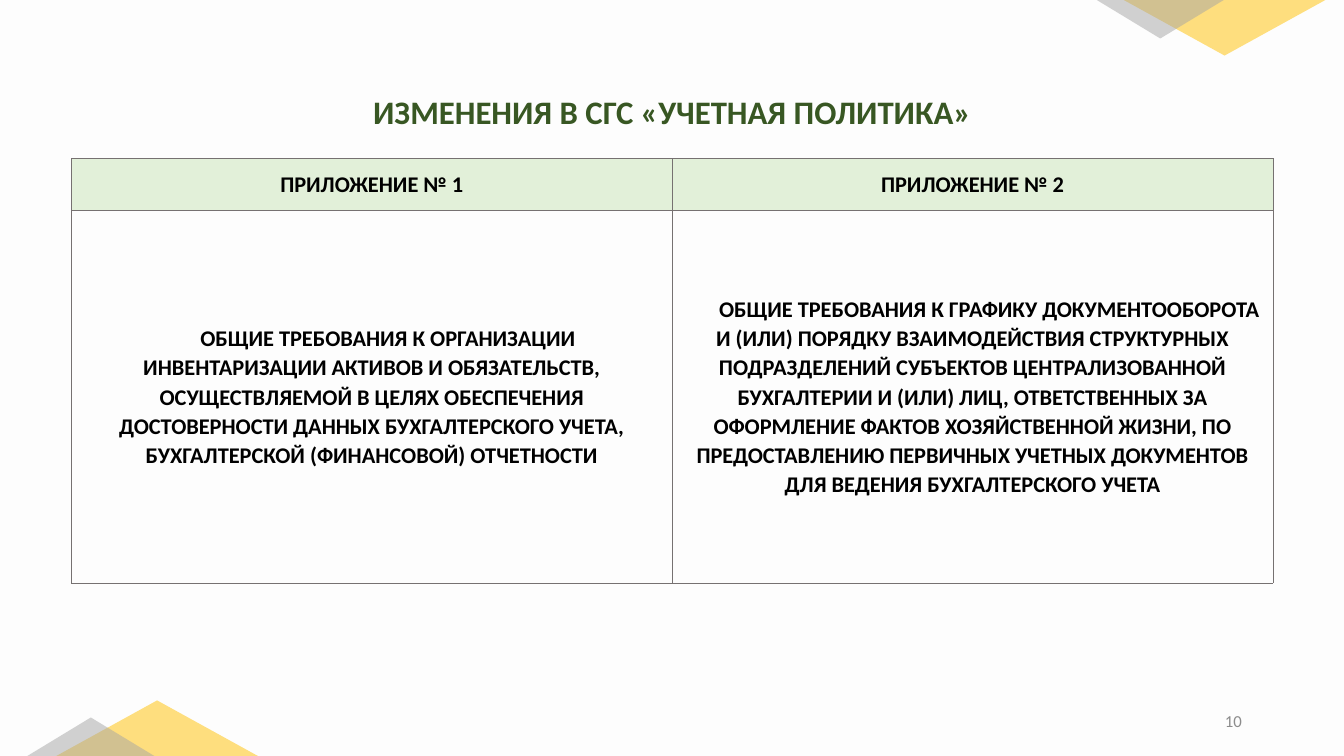
from dataclasses import dataclass

from lxml import etree
from pptx import Presentation
from pptx.dml.color import RGBColor
from pptx.enum.shapes import MSO_SHAPE
from pptx.enum.text import MSO_ANCHOR, MSO_AUTO_SIZE, PP_ALIGN
from pptx.oxml.ns import qn
from pptx.util import Cm, Pt

TRIANGLE = MSO_SHAPE.ISOSCELES_TRIANGLE
MIDDLE = MSO_ANCHOR.MIDDLE
NO_AUTOFIT = MSO_AUTO_SIZE.NONE
CENTER, RIGHT = PP_ALIGN.CENTER, PP_ALIGN.RIGHT

FONT = "Calibri"
SLIDE_W, SLIDE_H = 33.87, 19.05
LEFT, WIDTH = 1.8, 30.28
HEADER_H, BODY_H = 1.3, 9.4
YELLOW, GREY = "FFC000", "A5A5A5"


@dataclass
class Appendix:
    heading: str
    body: str
    indent: float


@dataclass
class Corner:
    left: float
    width: float
    height: float
    color: str
    at_top: bool


APPENDICES = [
    Appendix(
        "ПРИЛОЖЕНИЕ № 1",
        "ОБЩИЕ ТРЕБОВАНИЯ К ОРГАНИЗАЦИИ ИНВЕНТАРИЗАЦИИ АКТИВОВ И ОБЯЗАТЕЛЬСТВ, "
        "ОСУЩЕСТВЛЯЕМОЙ В ЦЕЛЯХ ОБЕСПЕЧЕНИЯ ДОСТОВЕРНОСТИ ДАННЫХ БУХГАЛТЕРСКОГО "
        "УЧЕТА, БУХГАЛТЕРСКОЙ (ФИНАНСОВОЙ) ОТЧЕТНОСТИ",
        0.81,
    ),
    Appendix(
        "ПРИЛОЖЕНИЕ № 2",
        "ОБЩИЕ ТРЕБОВАНИЯ К ГРАФИКУ ДОКУМЕНТООБОРОТА \n"
        "И (ИЛИ) ПОРЯДКУ ВЗАИМОДЕЙСТВИЯ СТРУКТУРНЫХ ПОДРАЗДЕЛЕНИЙ СУБЪЕКТОВ "
        "ЦЕНТРАЛИЗОВАННОЙ БУХГАЛТЕРИИ И (ИЛИ) ЛИЦ, ОТВЕТСТВЕННЫХ ЗА ОФОРМЛЕНИЕ "
        "ФАКТОВ ХОЗЯЙСТВЕННОЙ ЖИЗНИ, ПО ПРЕДОСТАВЛЕНИЮ ПЕРВИЧНЫХ УЧЕТНЫХ "
        "ДОКУМЕНТОВ ДЛЯ ВЕДЕНИЯ БУХГАЛТЕРСКОГО УЧЕТА",
        0.97,
    ),
]

CORNERS = [
    Corner(1.42, 5.08, 1.4, YELLOW, False),
    Corner(0.69, 3.2, 0.97, GREY, False),
    Corner(28.32, 5.08, 1.4, YELLOW, True),
    Corner(27.64, 3.2, 0.97, GREY, True),
]


def rgb(color: str) -> RGBColor:
    return RGBColor.from_string(color)


def write(tf, text: str, size: float, color: str, bold: bool,
          align=CENTER, spacing: float = 1.0):
    """Fill a text frame with one formatted paragraph and return it."""
    p = tf.paragraphs[0]
    p.text = text
    p.alignment = align
    p.line_spacing = spacing
    for r in p.runs:
        r.font.name = FONT
        r.font.size = Pt(size)
        r.font.bold = bold
        r.font.color.rgb = rgb(color)
    for br in p._p.findall(qn("a:br")):
        etree.SubElement(br, qn("a:rPr"), sz=str(int(size * 100)))
    return p


def add_borders(cell, color: str, width: float) -> None:
    tc_pr = cell._tc.get_or_add_tcPr()
    for side in ("lnL", "lnR", "lnT", "lnB"):
        ln = etree.SubElement(tc_pr, qn(f"a:{side}"), w=str(Pt(width)))
        fill = etree.SubElement(ln, qn("a:solidFill"))
        etree.SubElement(fill, qn("a:srgbClr"), val=color)


def fill_cell(cell, text: str, indent: float = 0, color: str = "") -> None:
    cell.vertical_anchor = MIDDLE
    cell.margin_left = cell.margin_right = Cm(0.18)
    cell.margin_top = cell.margin_bottom = 0
    p = write(cell.text_frame, text, 16, "000000", True, spacing=1.07)
    if indent:
        p_pr = p._p.get_or_add_pPr()
        p_pr.set("marL", "0")
        p_pr.set("indent", str(Cm(indent)))
    add_borders(cell, "767171", 0.25)
    if color:
        cell.fill.solid()
        cell.fill.fore_color.rgb = rgb(color)
    else:
        cell.fill.background()


def add_corner(slide, corner: Corner) -> None:
    top = 0 if corner.at_top else SLIDE_H - corner.height
    sp = slide.shapes.add_shape(TRIANGLE, Cm(corner.left), Cm(top),
                                Cm(corner.width), Cm(corner.height))
    sp.rotation = 180 if corner.at_top else 0
    sp.shadow.inherit = False
    sp.line.fill.background()
    sp.fill.solid()
    sp.fill.fore_color.rgb = rgb(corner.color)
    clr = sp._element.spPr.find(qn("a:solidFill")).find(qn("a:srgbClr"))
    etree.SubElement(clr, qn("a:alpha"), val="50000")


def main() -> None:
    prs = Presentation()
    prs.slide_width, prs.slide_height = Cm(SLIDE_W), Cm(SLIDE_H)
    slide = prs.slides.add_slide(prs.slide_layouts[5])
    slide.background.fill.solid()
    slide.background.fill.fore_color.rgb = rgb("FDFDFD")

    # Title
    title = slide.shapes.title
    title.left, title.top = Cm(LEFT), Cm(2.18)
    title.width, title.height = Cm(WIDTH), Cm(1.4)
    tf = title.text_frame
    tf.auto_size = NO_AUTOFIT
    tf.vertical_anchor = MIDDLE
    write(tf, "ИЗМЕНЕНИЯ В СГС «УЧЕТНАЯ ПОЛИТИКА»", 23.4, "385723", True, spacing=0.9)

    # Slide number
    number = slide.shapes.add_textbox(Cm(23.93), Cm(17.65), Cm(7.62), Cm(1.02))
    tf = number.text_frame
    tf.word_wrap = True
    tf.vertical_anchor = MIDDLE
    write(tf, "10", 12, "8C8C8C", False, RIGHT)

    # Table of appendices
    table = slide.shapes.add_table(2, len(APPENDICES), Cm(LEFT), Cm(3.99),
                                   Cm(WIDTH), Cm(HEADER_H + BODY_H)).table
    table.first_row = table.horz_banding = False
    table.rows[0].height, table.rows[1].height = Cm(HEADER_H), Cm(BODY_H)
    for col, appendix in enumerate(APPENDICES):
        fill_cell(table.cell(0, col), appendix.heading, color="E2F0D9")
        fill_cell(table.cell(1, col), appendix.body, appendix.indent)

    # Corner triangles
    for corner in CORNERS:
        add_corner(slide, corner)

    prs.save("out.pptx")


if __name__ == "__main__":
    main()
